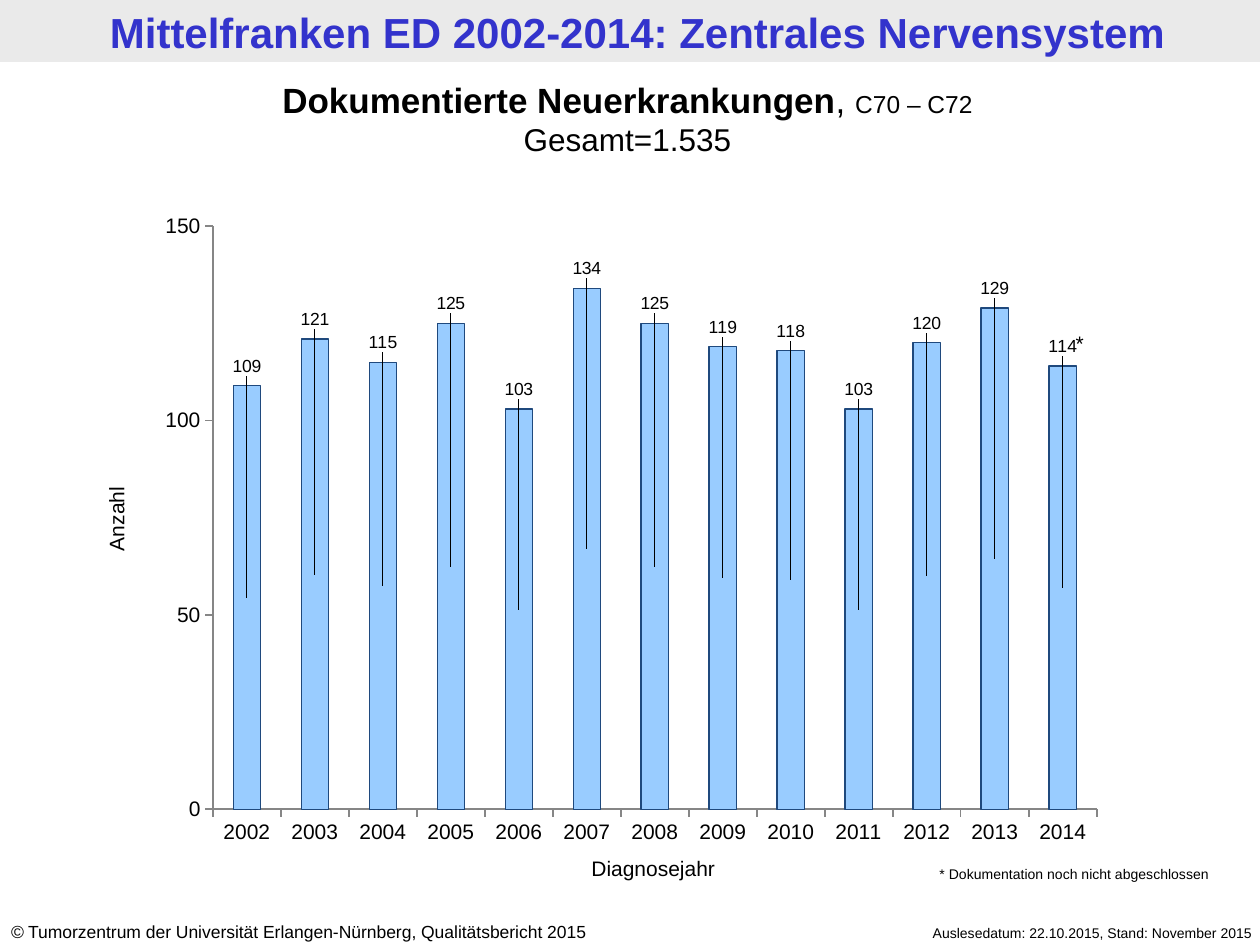
from lxml.etree import SubElement
from pptx import Presentation
from pptx.chart.data import CategoryChartData
from pptx.dml.color import RGBColor
from pptx.enum.chart import XL_CHART_TYPE, XL_LABEL_POSITION, XL_TICK_MARK
from pptx.enum.shapes import MSO_SHAPE
from pptx.enum.text import MSO_ANCHOR, MSO_AUTO_SIZE, PP_ALIGN
from pptx.oxml import parse_xml
from pptx.oxml.ns import nsdecls, qn
from pptx.util import Cm, Pt

FONT = "Arial"
COLORS = {"band": "EAEAEA", "title": "3333CC", "text": "000000",
          "bar": "99CCFF", "bar_line": "1F497D", "axis": "868686"}

YEARS = [str(year) for year in range(2002, 2015)]
CASES = [109, 121, 115, 125, 103, 134, 125, 119, 118, 103, 120, 129, 114]
AXIS_MAX = 150
PLOT = {"x": 0.07, "y": 0.03, "w": 0.91, "h": 0.9}
LABEL_GAP = 0.03  # share of the chart height between bar top and label centre


def color(name):
    return RGBColor.from_string(COLORS[name])


def style_font(font, size, name="text", bold=False, italic=False):
    font.name = FONT
    font.size = Pt(size)
    font.bold = bold
    font.italic = italic
    font.color.rgb = color(name)


def fill_text(frame, paragraphs, align):
    """Each paragraph is a list of (text, font settings) runs."""
    frame.word_wrap = True
    frame.vertical_anchor = MSO_ANCHOR.TOP
    for index, runs in enumerate(paragraphs):
        paragraph = frame.paragraphs[0] if index == 0 else frame.add_paragraph()
        paragraph.alignment = align
        for text, settings in runs:
            run = paragraph.add_run()
            run.text = text
            style_font(run.font, **settings)


def add_text(slide, box, paragraphs, align=PP_ALIGN.LEFT, rotation=0):
    label = slide.shapes.add_textbox(*map(Cm, box))
    label.rotation = rotation
    fill_text(label.text_frame, paragraphs, align)
    label.text_frame.auto_size = MSO_AUTO_SIZE.SHAPE_TO_FIT_TEXT


def add_title(slide, text):
    # Grey band, behind the title
    band = slide.shapes.add_shape(MSO_SHAPE.RECTANGLE, 0, 0, Cm(25.4), Cm(1.25))
    band.shadow.inherit = False
    band.fill.solid()
    band.fill.fore_color.rgb = color("band")
    band.line.fill.background()
    slide.shapes._spTree.insert(2, band._element)

    title = slide.shapes.title
    title.left, title.top, title.width, title.height = map(Cm, (0.15, 0.03, 25.4, 1.25))
    frame = title.text_frame
    frame.auto_size = MSO_AUTO_SIZE.NONE
    frame.margin_top = frame.margin_bottom = Cm(0.1)
    fill_text(frame, [[(text, {"size": 24, "name": "title", "bold": True})]],
              PP_ALIGN.CENTER)


def manual_layout(**settings):
    layout = parse_xml(f"<c:layout {nsdecls('c')}><c:manualLayout/></c:layout>")
    for tag, value in settings.items():
        SubElement(layout[0], qn(f"c:{tag}")).set("val", str(value))
    return layout


def style_axis(axis):
    axis.has_major_gridlines = False
    axis.major_tick_mark = XL_TICK_MARK.OUTSIDE
    axis.minor_tick_mark = XL_TICK_MARK.NONE
    axis.format.line.color.rgb = color("axis")
    axis.format.line.width = Pt(1)
    style_font(axis.tick_labels.font, 12)


def label_bars(series):
    labels = series.data_labels
    labels.show_value = True
    style_font(labels.font, 10)
    for index, cases in enumerate(CASES):
        label = series.points[index].data_label
        style_font(label.font, 10)
        label.position = XL_LABEL_POSITION.CENTER
    # Lift each label from the middle of its bar to just above it
    for element, cases in zip(labels._element.findall(qn("c:dLbl")), CASES):
        lift = cases / AXIS_MAX * PLOT["h"] / 2 + LABEL_GAP
        element.insert(1, manual_layout(x=0, y=round(-lift, 4)))


def add_case_chart(slide):
    data = CategoryChartData()
    data.categories = YEARS
    data.add_series("Neuerkrankungen", CASES)
    chart = slide.shapes.add_chart(XL_CHART_TYPE.COLUMN_STACKED, Cm(2.92), Cm(4.17),
                                   Cm(19.58), Cm(13.06), data).chart
    style_font(chart.font, 12)
    chart.has_legend = False
    chart.has_title = False

    # Axes
    style_axis(chart.category_axis)
    style_axis(chart.value_axis)
    chart.value_axis.minimum_scale = 0
    chart.value_axis.maximum_scale = AXIS_MAX
    chart.value_axis.major_unit = 50

    # Bars
    plot = chart.plots[0]
    plot.gap_width = 150
    plot.overlap = 100
    plot.vary_by_categories = False
    series = plot.series[0]
    series.format.fill.solid()
    series.format.fill.fore_color.rgb = color("bar")
    series.format.line.color.rgb = color("bar_line")
    series.format.line.width = Pt(0.75)
    label_bars(series)

    # Plot area
    plot_area = chart._chartSpace.chart.plotArea
    for old_layout in plot_area.findall(qn("c:layout")):
        plot_area.remove(old_layout)
    plot_area.insert(0, manual_layout(layoutTarget="inner", xMode="edge",
                                      yMode="edge", **PLOT))


def main():
    prs = Presentation()
    prs.slide_width, prs.slide_height = Cm(25.4), Cm(19.05)
    slide = prs.slides.add_slide(prs.slide_layouts[5])

    add_title(slide, "Mittelfranken ED 2002-2014: Zentrales Nervensystem")

    # Footer
    add_text(slide, (16.89, 18.52, 8.61, 0.61),
             [[("Auslesedatum: 22.10.2015, Stand: November 2015", {"size": 8})]],
             PP_ALIGN.RIGHT)
    add_text(slide, (-0.03, 18.44, 13.31, 0.69),
             [[("©", {"size": 10, "italic": True}),
               (" Tumorzentrum der Universität Erlangen-Nürnberg, Qualitätsbericht 2015",
                {"size": 10})]])

    add_case_chart(slide)

    # Chart heading
    add_text(slide, (-0.1, 1.45, 25.5, 1.88),
             [[("Dokumentierte Neuerkrankungen", {"size": 20, "bold": True}),
               (", ", {"size": 20}), ("C70 – C72", {"size": 14})],
              [("Gesamt=1.535", {"size": 18})]], PP_ALIGN.CENTER)

    # Axis titles
    add_text(slide, (10.31, 17.12, 5.72, 0.76), [[("Diagnosejahr", {"size": 12})]],
             PP_ALIGN.CENTER)
    add_text(slide, (0.79, 10.08, 3.1, 0.76), [[("Anzahl", {"size": 12})]],
             PP_ALIGN.CENTER, rotation=270)

    # Mark on the last year and its footnote
    add_text(slide, (21.11, 6.53, 0.99, 0.76), [[("*", {"size": 12})]], PP_ALIGN.RIGHT)
    add_text(slide, (18.69, 17.32, 6.3, 0.61),
             [[("* Dokumentation noch nicht abgeschlossen", {"size": 8})]])

    prs.save("out.pptx")


if __name__ == "__main__":
    main()
